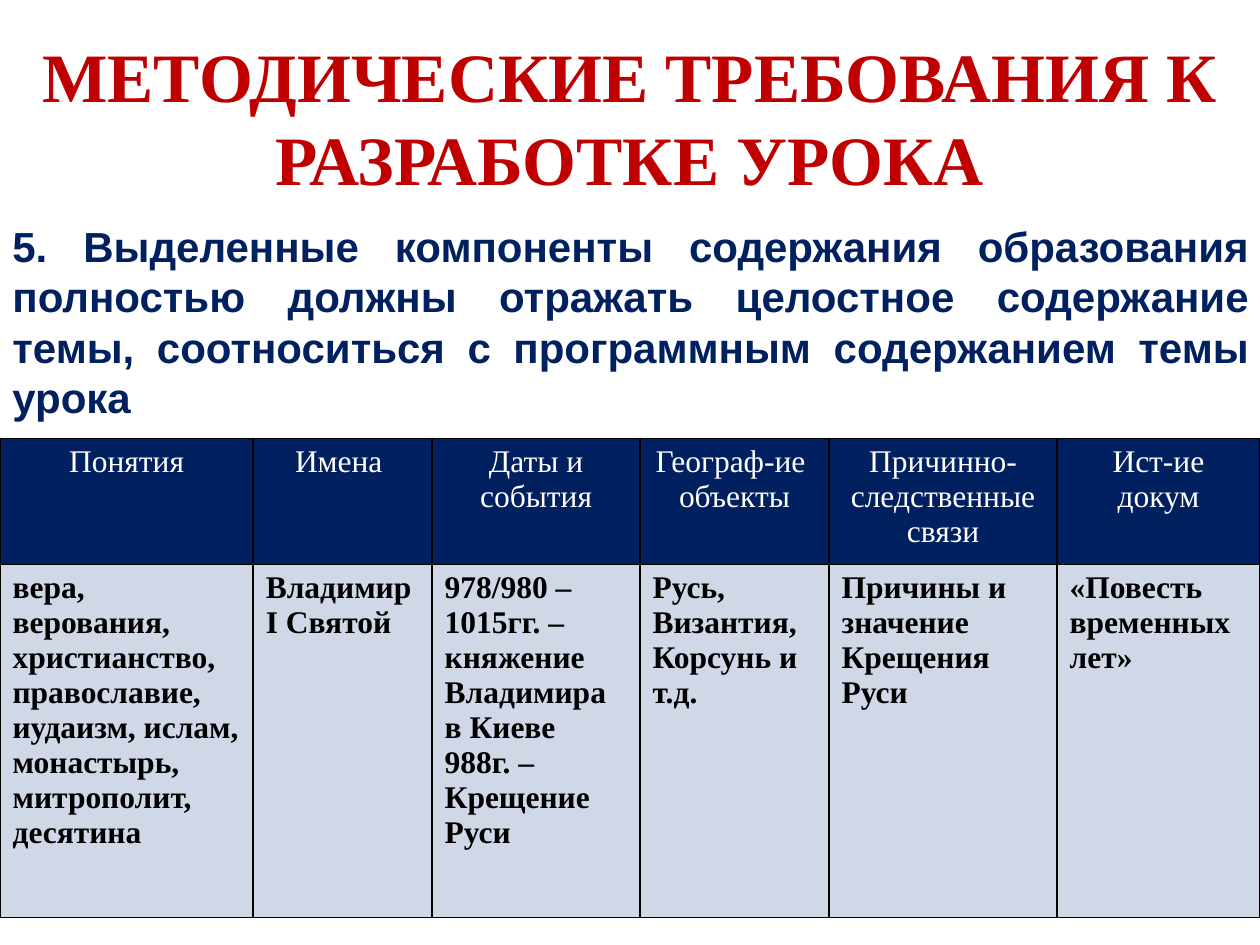
from lxml import etree
from pptx import Presentation, util as u
from pptx.dml.color import RGBColor
from pptx.enum import text
from pptx.oxml import ns

RED = RGBColor(0xC0, 0x00, 0x00)
NAVY = RGBColor(0x00, 0x20, 0x60)
PALE = RGBColor(0xD0, 0xD8, 0xE8)
WHITE = RGBColor(0xFF, 0xFF, 0xFF)
BLACK = RGBColor(0x00, 0x00, 0x00)
SERIF, SANS = "Times New Roman", "Arial"
ALIGN = text.PP_ALIGN

TITLE = "МЕТОДИЧЕСКИЕ ТРЕБОВАНИЯ К РАЗРАБОТКЕ УРОКА"
REQUIREMENT = (
    "5. Выделенные компоненты содержания образования полностью должны "
    "отражать целостное содержание темы, соотноситься с программным "
    "содержанием темы урока"
)
COLUMNS = [
    (2.01, "Понятия", "вера, верования, христианство, православие, иудаизм, "
                      "ислам, монастырь, митрополит, десятина"),
    (1.42, "Имена ", "Владимир I Святой"),
    (1.65, "Даты и события", "978/980 – 1015гг. – княжение Владимира в Киеве\n"
                             "988г. – Крещение Руси"),
    (1.5, "Географ-ие  объекты", "Русь, Византия,\nКорсунь и т.д."),
    (1.81, "Причинно-следственные связи", "Причины и значение  Крещения Руси"),
    (1.61, "Ист-ие докум", "«Повесть временных лет»"),
]
ROW_HEIGHTS = (1, 2.8)


def write(frame, content, font_name, size, color, bold, align):
    frame.text = content
    for paragraph in frame.paragraphs:
        paragraph.alignment = align
        font = paragraph.font
        font.name, font.size, font.bold = font_name, u.Pt(size), bold
        font.color.rgb = color


def add_text(slide, place, content, font_name, size, color, align, anchor):
    frame = slide.shapes.add_textbox(*map(u.Inches, place)).text_frame
    frame.word_wrap = True
    frame.vertical_anchor = anchor
    write(frame, content, font_name, size, color, True, align)


def add_borders(cell):
    properties = cell._tc.get_or_add_tcPr()
    for position, side in enumerate(("lnL", "lnR", "lnT", "lnB")):
        line = etree.Element(ns.qn(f"a:{side}"), w=str(u.Pt(1)))
        fill = etree.SubElement(line, ns.qn("a:solidFill"))
        etree.SubElement(fill, ns.qn("a:srgbClr"), val=str(BLACK))
        properties.insert(position, line)


def fill_cell(cell, content, fill, color, bold, align):
    write(cell.text_frame, content, SERIF, 18, color, bold, align)
    cell.fill.solid()
    cell.fill.fore_color.rgb = fill
    add_borders(cell)


def add_components_table(slide):
    table = slide.shapes.add_table(
        len(ROW_HEIGHTS), len(COLUMNS),
        u.Inches(0), u.Inches(3.48), u.Inches(10), u.Inches(sum(ROW_HEIGHTS)),
    ).table
    for row, height in zip(table.rows, ROW_HEIGHTS):
        row.height = u.Inches(height)
    for index, (width, heading, examples) in enumerate(COLUMNS):
        table.columns[index].width = u.Inches(width)
        fill_cell(table.cell(0, index), heading, NAVY, WHITE, False, ALIGN.CENTER)
        fill_cell(table.cell(1, index), examples, PALE, BLACK, True, ALIGN.LEFT)


def main():
    presentation = Presentation()
    presentation.slide_width = u.Inches(10)
    presentation.slide_height = u.Inches(7.5)
    slide = presentation.slides.add_slide(presentation.slide_layouts[6])
    add_text(slide, (0, 0.3, 10, 1.25), TITLE, SERIF, 39.6, RED,
             ALIGN.CENTER, text.MSO_ANCHOR.MIDDLE)
    add_text(slide, (0, 1.7, 10.01, 1.72), REQUIREMENT, SANS, 24, NAVY,
             ALIGN.JUSTIFY, text.MSO_ANCHOR.TOP)
    add_components_table(slide)
    presentation.save("out.pptx")


if __name__ == "__main__":
    main()
